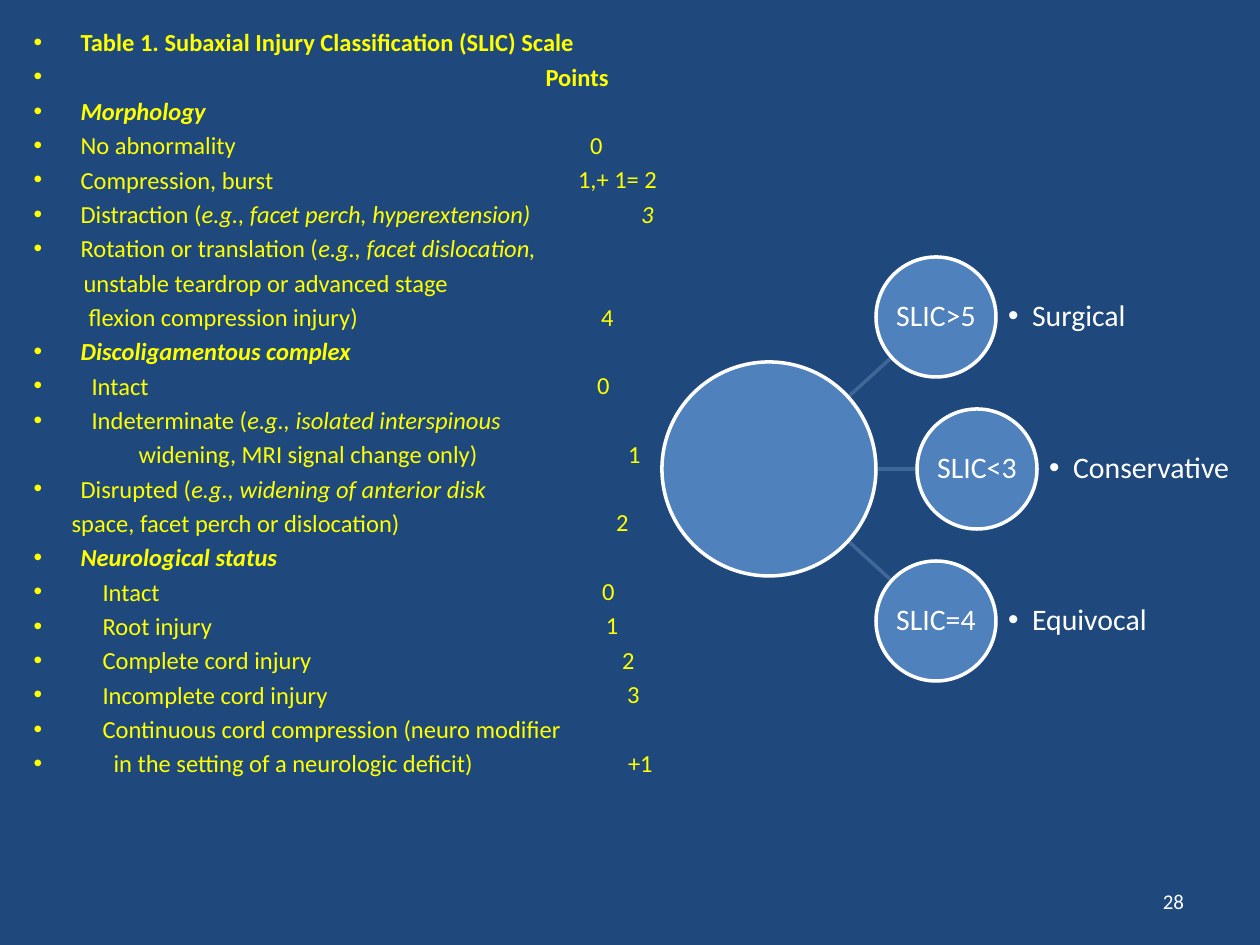
from dataclasses import dataclass
from math import hypot

from lxml.etree import SubElement
from pptx import Presentation
from pptx.dml.color import RGBColor
from pptx.enum.shapes import MSO_CONNECTOR, MSO_SHAPE
from pptx.enum.text import MSO_ANCHOR, MSO_AUTO_SIZE, PP_ALIGN
from pptx.oxml.ns import qn
from pptx.util import Emu, Inches, Pt


@dataclass(frozen=True)
class Theme:
    font: str = "Calibri"
    background: RGBColor = RGBColor(0x1F, 0x49, 0x7D)
    scale_text: RGBColor = RGBColor(0xFF, 0xFF, 0x00)
    light: RGBColor = RGBColor(0xFF, 0xFF, 0xFF)
    circle: RGBColor = RGBColor(0x4F, 0x81, 0xBD)
    link: RGBColor = RGBColor(0x3F, 0x67, 0x97)
    scale_size: float = 14
    scale_line: float = 16.8
    scale_pitch: float = 19.6
    node_size: float = 17
    number_size: float = 12
    outline: float = 2


THEME = Theme()
EMU_PER_PX = Inches(1) / 126

SCALE_ROWS = [
    (47, True, [("Table 1. Subaxial Injury Classification (SLIC) Scale", "b")]),
    (512, True, [("Points", "b")]),
    (47, True, [("Morphology", "bi")]),
    (47, True, [("No abnormality", "")]),
    (47, True, [("Compression, burst", "")]),
    (47, True, [("Distraction (", ""), ("e.g., facet perch, hyperextension)", "i")]),
    (47, True, [("Rotation or translation (", ""), ("e.g., facet dislocation,", "i")]),
    (50, False, [("unstable teardrop or advanced stage", "")]),
    (55, False, [("flexion compression injury)", "")]),
    (47, True, [("Discoligamentous complex", "bi")]),
    (58, True, [("Intact", "")]),
    (58, True, [("Indeterminate (", ""), ("e.g., isolated interspinous", "i")]),
    (105, False, [("widening, MRI signal change only)", "")]),
    (47, True, [("Disrupted (", ""), ("e.g., widening of anterior disk", "i")]),
    (38, False, [("space, facet perch or dislocation)", "")]),
    (47, True, [("Neurological status", "bi")]),
    (69, True, [("Intact", "")]),
    (69, True, [("Root injury", "")]),
    (69, True, [("Complete cord injury", "")]),
    (69, True, [("Incomplete cord injury", "")]),
    (69, True, [("Continuous cord compression (neuro modifier", "")]),
    (80, True, [("in the setting of a neurologic deficit)", "")]),
]

POINTS = [
    (3, 12, "0", ""), (4, 0, "1,+ 1= 2", ""), (5, 63, "3", "i"), (8, 23, "4", ""),
    (10, 19, "0", ""), (12, 50, "1", ""), (14, 38, "2", ""), (16, 24, "0", ""),
    (17, 28, "1", ""), (18, 44, "2", ""), (19, 49, "3", ""), (21, 50, "+1", ""),
]

DECISIONS = [
    (274, 60, "SLIC>5", "Surgical"),
    (315, 212, "SLIC<3", "Conservative"),
    (274, 364, "SLIC=4", "Equivocal"),
]


def px(length):
    """Turn a length in px into EMU."""
    return Emu(round(length * EMU_PER_PX))


def style_font(font, size, color, style=""):
    """Apply the theme font with a size, colour and bold or italic marks."""
    font.name, font.size = THEME.font, Pt(size)
    font.color.rgb = color
    font.bold, font.italic = "b" in style, "i" in style


def set_indent(paragraph, left, bulleted):
    """Set a left margin in px, with a hanging bullet or none."""
    properties = paragraph._p.get_or_add_pPr()
    properties.set("marL", str(px(left)))
    properties.set("indent", str(-px(left) if bulleted else 0))
    if bulleted:
        SubElement(properties, qn("a:buFont"), typeface="Arial")
        SubElement(properties, qn("a:buChar"), char="•")
    else:
        SubElement(properties, qn("a:buNone"))


def clear_insets(frame):
    """Remove the inner margins of a text frame."""
    frame.margin_left = frame.margin_right = frame.margin_top = frame.margin_bottom = 0


def add_text_box(slide, left, top, width, height):
    """Add a wrapping text box without insets and return its text frame."""
    frame = slide.shapes.add_textbox(px(left), px(top), px(width), px(height)).text_frame
    frame.word_wrap = True
    clear_insets(frame)
    return frame


def next_paragraph(frame, index):
    """Return the first paragraph of a frame, or a new one after it."""
    return frame.add_paragraph() if index else frame.paragraphs[0]


def fill_scale(body, left, top, width, height):
    """Place the scale items in the body placeholder."""
    body.left, body.top, body.width, body.height = map(px, (left, top, width, height))
    frame = body.text_frame
    frame.auto_size = MSO_AUTO_SIZE.NONE
    for index, (indent, bulleted, runs) in enumerate(SCALE_ROWS):
        paragraph = next_paragraph(frame, index)
        set_indent(paragraph, indent, bulleted)
        paragraph.space_before = Pt(THEME.scale_pitch - THEME.scale_line if index else 0)
        style_font(paragraph.font, THEME.scale_size, THEME.scale_text, runs[0][1])
        for text, style in runs:
            run = paragraph.add_run()
            run.text = text
            if len(runs) > 1:
                run.font.italic = "i" in style


def add_points(slide, left, top, width, height):
    """Write the points column, spaced to meet the rows of the scale."""
    frame = add_text_box(slide, left, top, width, height)
    previous_row = POINTS[0][0]
    for index, (row, indent, text, style) in enumerate(POINTS):
        paragraph = next_paragraph(frame, index)
        paragraph.text = text
        set_indent(paragraph, indent, False)
        gap = (row - previous_row) * THEME.scale_pitch - THEME.scale_line
        paragraph.space_before = Pt(max(gap, 0))
        style_font(paragraph.font, THEME.scale_size, THEME.scale_text, style)
        previous_row = row


def add_circle(slide, center_x, center_y, radius):
    """Add an outlined circle around a centre."""
    circle = slide.shapes.add_shape(
        MSO_SHAPE.OVAL, px(center_x - radius), px(center_y - radius), px(2 * radius), px(2 * radius))
    circle.shadow.inherit = False
    circle.fill.solid()
    circle.fill.fore_color.rgb = THEME.circle
    circle.line.color.rgb = THEME.light
    circle.line.width = Pt(THEME.outline)
    return circle


def add_link(slide, hub, node, hub_radius, node_radius):
    """Draw a line between the facing edges of two circles."""
    across, down = node[0] - hub[0], node[1] - hub[1]
    distance = hypot(across, down)
    ends = [(hub[0] + across * part, hub[1] + down * part)
            for part in (hub_radius / distance, 1 - node_radius / distance)]
    link = slide.shapes.add_connector(MSO_CONNECTOR.STRAIGHT, *(px(value) for end in ends for value in end))
    link.line.color.rgb = THEME.link
    link.line.width = Pt(THEME.outline)
    SubElement(link._element.spPr, qn("a:effectLst"))


def add_decision(slide, center_x, center_y, radius, score, treatment):
    """Add a score circle and the bulleted treatment beside it."""
    score_frame = add_circle(slide, center_x, center_y, radius).text_frame
    clear_insets(score_frame)
    score_frame.word_wrap = False
    label_frame = add_text_box(slide, center_x + radius + 12, center_y - radius, 196, 2 * radius)
    for frame, text in ((score_frame, score), (label_frame, treatment)):
        frame.vertical_anchor = MSO_ANCHOR.MIDDLE
        paragraph = frame.paragraphs[0]
        paragraph.text = text
        paragraph.line_spacing = 0.9
        if frame is label_frame:
            set_indent(paragraph, 24, True)
        else:
            paragraph.alignment = PP_ALIGN.CENTER
        style_font(paragraph.font, THEME.node_size, THEME.light)


def add_decisions(slide, left, top, hub_radius, node_radius):
    """Draw the hub and its linked decisions from a top-left corner."""
    hub = (left + hub_radius, top + 212)
    nodes = [(left + x, top + y, score, treatment) for x, y, score, treatment in DECISIONS]
    for x, y, *_ in nodes:
        add_link(slide, hub, (x, y), hub_radius, node_radius)
    add_circle(slide, *hub, hub_radius)
    for x, y, score, treatment in nodes:
        add_decision(slide, x, y, node_radius, score, treatment)


def add_slide_number(slide, left, top, width, height):
    """Write the slide number at the right of its box."""
    frame = add_text_box(slide, left, top, width, height)
    frame.margin_right = px(13)
    frame.vertical_anchor = MSO_ANCHOR.MIDDLE
    paragraph = frame.paragraphs[0]
    paragraph.text = "28"
    paragraph.alignment = PP_ALIGN.RIGHT
    style_font(paragraph.font, THEME.number_size, THEME.light)


def main():
    """Build and save the slide."""
    presentation = Presentation()
    presentation.slide_width, presentation.slide_height = px(1260), px(945)
    slide = presentation.slides.add_slide(presentation.slide_layouts[1])
    slide.background.fill.solid()
    slide.background.fill.fore_color.rgb = THEME.background
    title = slide.shapes.title._element
    title.getparent().remove(title)
    fill_scale(slide.placeholders[1], 21, 21, 1260, 819)
    add_points(slide, 578, 130, 84, 650)
    add_decisions(slide, 662, 257, 107, 60)
    add_slide_number(slide, 903, 876, 294, 50)
    presentation.save("out.pptx")


if __name__ == "__main__":
    main()
